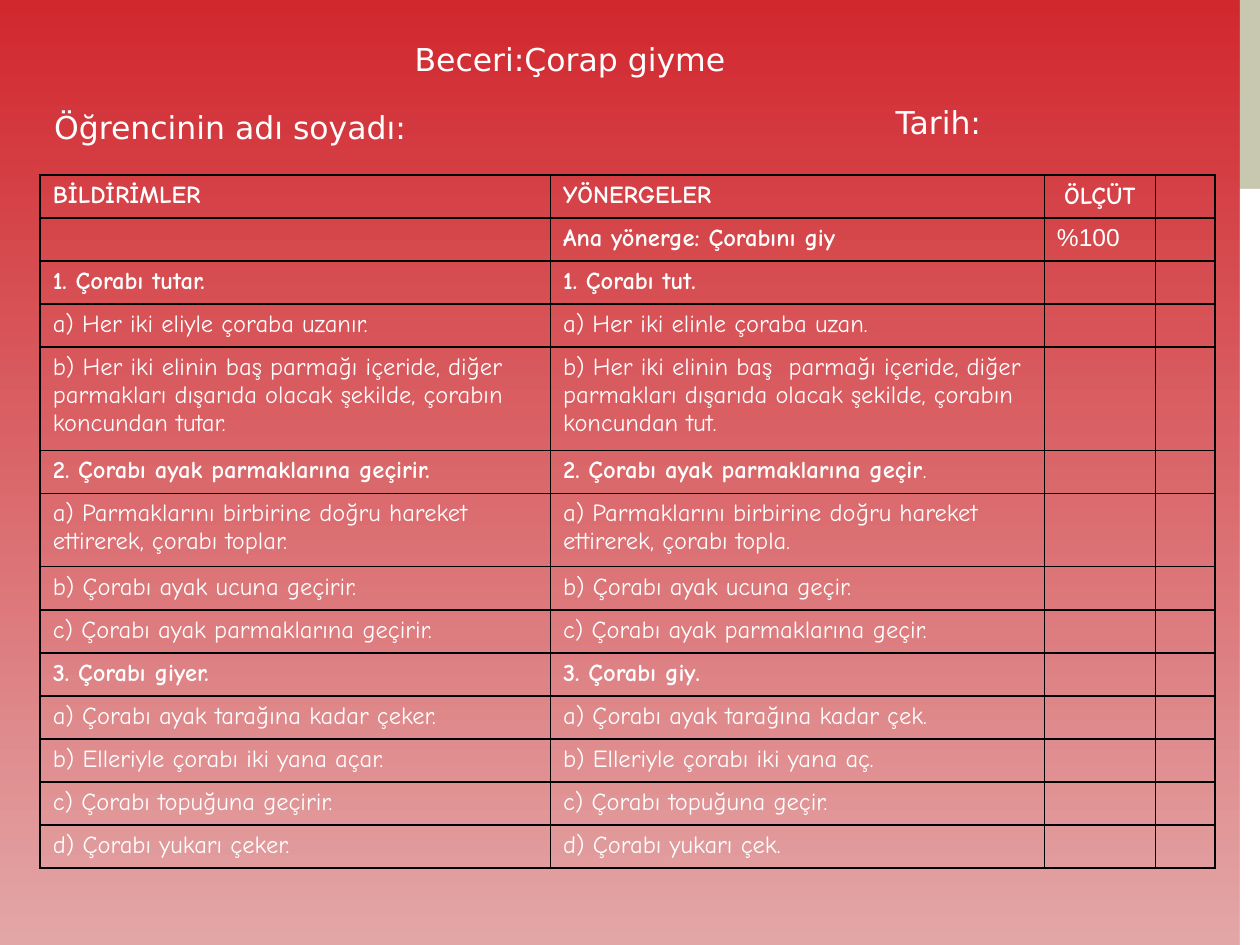
from lxml.etree import SubElement
from pptx import Presentation
from pptx.dml.color import RGBColor as Rgb
from pptx.enum.shapes import MSO_SHAPE as Shape
from pptx.enum.text import MSO_ANCHOR as Anchor, MSO_AUTO_SIZE as Fit, PP_ALIGN as Align
from pptx.oxml.ns import qn
from pptx.util import Pt

HUES = {"top": "D1282E", "end": "E3A6A7", "sand": "C8C8B1", "white": "FFFFFF", "line": "000000"}
COLS = [291.6, 282.2, 63.4, 34]
ROW = 24.6
TALL = {4: 59, 6: 42}
HEADS = {0, 1, 2, 5, 9}
ROWS = [
    ("BİLDİRİMLER", "YÖNERGELER", "ÖLÇÜT"),
    ("", "Ana yönerge: Çorabını giy", "%100"),
    ("1. Çorabı tutar.", "1. Çorabı tut."),
    ("a) Her iki eliyle çoraba uzanır.", "a) Her iki elinle çoraba uzan."),
    ("b) Her iki elinin baş parmağı içeride, diğer parmakları dışarıda olacak şekilde, çorabın koncundan tutar.",
     "b) Her iki elinin baş  parmağı içeride, diğer parmakları dışarıda olacak şekilde, çorabın koncundan tut."),
    ("2. Çorabı ayak parmaklarına geçirir.", "2. Çorabı ayak parmaklarına geçir"),
    ("a) Parmaklarını birbirine doğru hareket ettirerek, çorabı toplar.",
     "a) Parmaklarını birbirine doğru hareket ettirerek, çorabı topla."),
    ("b) Çorabı ayak ucuna geçirir.", "b) Çorabı ayak ucuna geçir."),
    ("c) Çorabı ayak parmaklarına geçirir.", "c) Çorabı ayak parmaklarına geçir."),
    ("3. Çorabı giyer.", "3. Çorabı giy."),
    ("a) Çorabı ayak tarağına kadar çeker.", "a) Çorabı ayak tarağına kadar çek."),
    ("b) Elleriyle çorabı iki yana açar.", "b) Elleriyle çorabı iki yana aç."),
    ("c) Çorabı topuğuna geçirir.", "c) Çorabı topuğuna geçir."),
    ("d) Çorabı yukarı çeker.", "d) Çorabı yukarı çek."),
]


def hue(name):
    return Rgb.from_string(HUES[name])


def style(font, face, size, bold=False):
    font.name, font.size, font.bold = face, Pt(size), bold
    font.color.rgb = hue("white")


def paint(slide):
    fill = slide.background.fill
    fill.gradient()
    fill.gradient_angle = 270
    for stop, name, pos in zip(fill.gradient_stops, ("top", "end"), (0, 1)):
        stop.color.rgb = hue(name)
        stop.position = pos


def add_bar(slide, top, high, name):
    bar = slide.shapes.add_shape(Shape.RECTANGLE, Pt(708.5), Pt(top), Pt(11.5), Pt(high))
    bar.shadow.inherit = False
    bar.fill.solid()
    bar.fill.fore_color.rgb = hue(name)
    bar.line.fill.background()


def label(shape, text, left, top, wide):
    shape.left, shape.top, shape.width, shape.height = Pt(left), Pt(top), Pt(wide), Pt(29)
    frame = shape.text_frame
    frame.word_wrap = True
    frame.auto_size = Fit.NONE
    frame.vertical_anchor = Anchor.TOP
    frame.text = text
    para = frame.paragraphs[0]
    para.alignment = Align.LEFT
    para.space_before = Pt(0)
    para.line_spacing = 1.0
    style(para.font, "DejaVu Sans", 18)


def edge(cell):
    props = cell._tc.get_or_add_tcPr()
    for side in ("lnL", "lnR", "lnT", "lnB"):
        line = SubElement(props, qn(f"a:{side}"), w=str(Pt(1)))
        fill = SubElement(line, qn("a:solidFill"))
        SubElement(fill, qn("a:srgbClr"), val=HUES["line"])


def fill_cell(cell, text, bold, face="Comic Neue"):
    edge(cell)
    cell.fill.background()
    cell.text = text
    para = cell.text_frame.paragraphs[0]
    style(para.font, face, 14, bold)
    return para


def add_grid(slide):
    high = [TALL.get(i, ROW) for i in range(len(ROWS))]
    frame = slide.shapes.add_table(len(ROWS), len(COLS), Pt(23), Pt(100), Pt(sum(COLS)), Pt(sum(high)))
    grid = frame.table
    grid.first_row = grid.horz_banding = False
    for col, wide in zip(grid.columns, COLS):
        col.width = Pt(wide)
    for i, texts in enumerate(ROWS):
        grid.rows[i].height = Pt(high[i])
        for j in range(len(COLS)):
            text = texts[j] if j < len(texts) else ""
            score = text == "%100"
            para = fill_cell(grid.cell(i, j), text, i in HEADS and not score,
                             "Arial" if score else "Comic Neue")
            if i == 0:
                para.alignment = Align.CENTER if j == 2 else Align.JUSTIFY
    grid.cell(0, 2).vertical_anchor = Anchor.MIDDLE
    dot = grid.cell(5, 1).text_frame.paragraphs[0].add_run()
    dot.text = "."
    dot.font.bold = False


def main():
    deck = Presentation()
    deck.slide_width, deck.slide_height = Pt(720), Pt(540)
    slide = deck.slides.add_slide(deck.slide_layouts[5])
    paint(slide)
    add_bar(slide, 0, 108, "sand")
    add_bar(slide, 108, 432, "white")
    add_grid(slide)
    for text, left, top, wide in (("Öğrencinin adı soyadı:", 23.8, 58.3, 379.4),
                                  ("Tarih:", 504.7, 55.4, 139.7)):
        label(slide.shapes.add_textbox(0, 0, 0, 0), text, left, top, wide)
    label(slide.shapes.title, "Beceri:Çorap giyme", 229.7, 19.4, 211.7)
    deck.save("out.pptx")


if __name__ == "__main__":
    main()
